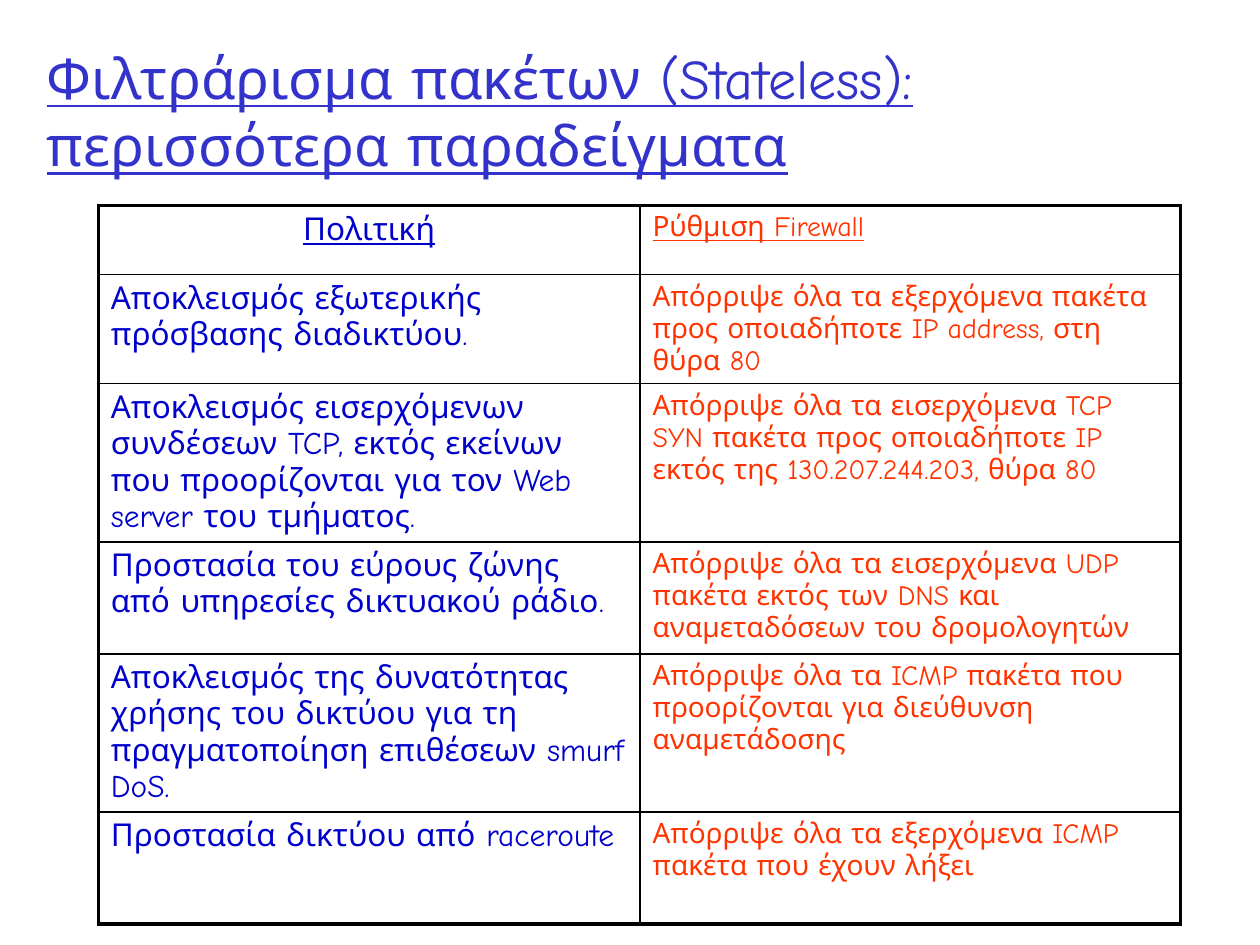
"""Build a slide with a table of stateless packet filtering examples."""
from lxml.etree import SubElement
from pptx import Presentation
from pptx.dml.color import RGBColor
from pptx.enum.text import MSO_ANCHOR, MSO_AUTO_SIZE, PP_ALIGN
from pptx.oxml.ns import qn
from pptx.util import Inches, Pt

BLUE, RED, BLACK = "0000CC", "FF3300", "000000"


def write(frame, text, size, color, underline=False, align=PP_ALIGN.LEFT, spacing=None):
    paragraph = frame.paragraphs[0]
    paragraph.alignment = align
    if spacing:
        side, percent = spacing
        space = SubElement(paragraph._p.get_or_add_pPr(), qn(f"a:{side}"))
        SubElement(space, qn("a:spcPct"), val=str(percent * 1000))
    run = paragraph.add_run()
    run.text = text
    run.font.name = "Comic Neue"
    run.font.size = Pt(size)
    run.font.bold = False
    run.font.underline = underline
    run.font.color.rgb = RGBColor.from_string(color)


def draw_borders(cell, widths):
    properties = cell._tc.get_or_add_tcPr()
    for side, width in widths.items():
        line = SubElement(properties, qn(f"a:ln{side}"), w=str(Pt(width)))
        SubElement(SubElement(line, qn("a:solidFill")), qn("a:srgbClr"), val=BLACK)


presentation = Presentation()
presentation.slide_width = Inches(10)
presentation.slide_height = Inches(7.5)
slide = presentation.slides.add_slide(presentation.slide_layouts[5])

title = slide.shapes.title
title.left, title.top = Inches(0.27), Inches(0.25)
title.width, title.height = Inches(9.16), Inches(1.25)
title.text_frame.word_wrap = True
title.text_frame.auto_size = MSO_AUTO_SIZE.NONE
title.text_frame.vertical_anchor = MSO_ANCHOR.MIDDLE
write(title.text_frame, "Φιλτράρισμα πακέτων (Stateless): περισσότερα παραδείγματα",
      size=32, color="3333CC", underline=True)

rules = [
    ("Πολιτική", "Ρύθμιση Firewall"),
    ("Αποκλεισμός εξωτερικής πρόσβασης διαδικτύου.",
     "Απόρριψε όλα τα εξερχόμενα πακέτα προς οποιαδήποτε IP address, στη θύρα 80"),
    ("Αποκλεισμός εισερχόμενων συνδέσεων TCP, εκτός εκείνων που προορίζονται "
     "για τον Web server του τμήματος.",
     "Απόρριψε όλα τα εισερχόμενα TCP SYN πακέτα προς οποιαδήποτε IP εκτός της "
     "130.207.244.203, θύρα 80"),
    ("Προστασία του εύρους ζώνης από υπηρεσίες δικτυακού ράδιο.",
     "Απόρριψε όλα τα εισερχόμενα UDP πακέτα εκτός των DNS και αναμεταδόσεων "
     "του δρομολογητών"),
    ("Αποκλεισμός της δυνατότητας χρήσης του δικτύου για τη πραγματοποίηση "
     "επιθέσεων smurf DoS.",
     "Απόρριψε όλα τα ICMP πακέτα που προορίζονται για διεύθυνση αναμετάδοσης"),
    ("Προστασία δικτύου από raceroute",
     "Απόρριψε όλα τα εξερχόμενα ICMP πακέτα που έχουν λήξει"),
]
row_heights = [0.55, 0.75, 1, 0.89, 0.9, 0.89]
column_widths = [4.3, 4.29]

rules_frame = slide.shapes.add_table(len(rules), 2, Inches(0.78), Inches(1.63),
                                     Inches(8.59), Inches(5.84))
rules_table = rules_frame.table
rules_table.first_row = rules_table.horz_banding = False
for column, width in zip(rules_table.columns, column_widths):
    column.width = Inches(width)
for row, height in zip(rules_table.rows, row_heights):
    row.height = Inches(height)
rules_frame.height = Inches(5.84)

last_row = len(rules) - 1
for row_index, rule in enumerate(rules):
    for column_index, text in enumerate(rule):
        cell = rules_table.cell(row_index, column_index)
        is_header = row_index == 0
        is_policy = column_index == 0
        draw_borders(cell, {
            "L": 2.25 if is_policy else 1,
            "R": 1 if is_policy else 2.25,
            "T": 2.25 if is_header else 1,
            "B": 2.25 if row_index == last_row else 1,
        })
        cell.fill.background()
        spaced_before = (row_index, column_index) in [(0, 0), (2, 1)]
        write(cell.text_frame, text,
              size=18 if is_policy else 16,
              color=BLUE if is_policy else RED,
              underline=is_header,
              align=PP_ALIGN.CENTER if is_header and is_policy else PP_ALIGN.LEFT,
              spacing=("spcBef", 20) if spaced_before else ("spcAft", 50))

presentation.save("out.pptx")
